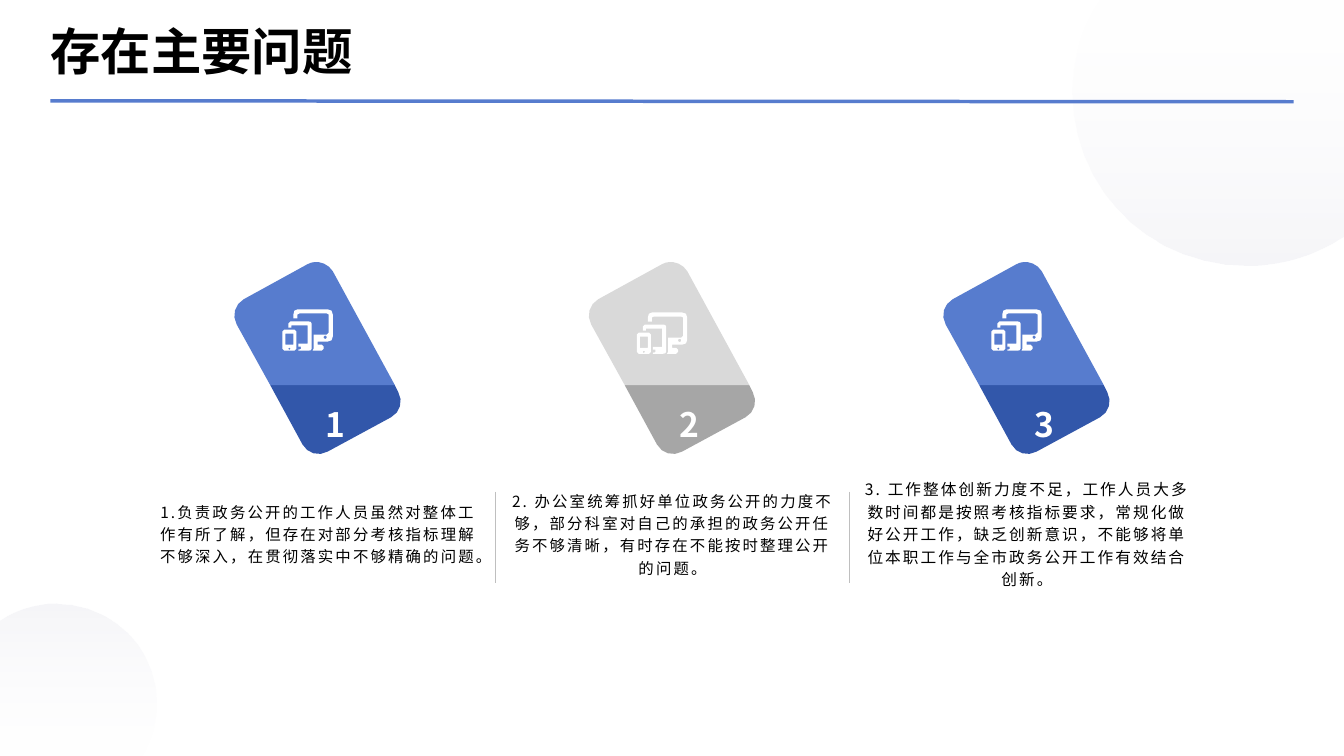
from math import dist, sqrt

from lxml import etree
from pptx import Presentation
from pptx.dml.color import RGBColor
from pptx.enum.shapes import MSO_CONNECTOR
from pptx.enum.text import MSO_ANCHOR, MSO_AUTO_SIZE, PP_ALIGN
from pptx.oxml.ns import qn
from pptx.util import Pt

STRAIGHT = MSO_CONNECTOR.STRAIGHT
MIDDLE = MSO_ANCHOR.MIDDLE
NO_FIT = MSO_AUTO_SIZE.NONE
LEFT, CENTER = PP_ALIGN.LEFT, PP_ALIGN.CENTER

FONT = "Noto Sans CJK SC"
BLUE, DARK_BLUE = "577CCE", "3257AA"
LIGHT_GRAY, GRAY = "D9D9D9", "A6A6A6"
CARD_X, CARD_PITCH = 167.1, 253.2

PROBLEMS = [
    ("1.负责政务公开的工作人员虽然对整体工作有所了解，但存在对部分考核指标理解不够深入，"
     "在贯彻落实中不够精确的问题。", 11, BLUE, DARK_BLUE, 221),
    ("2. 办公室统筹抓好单位政务公开的力度不够，部分科室对自己的承担的政务公开任务不够清晰，"
     "有时存在不能按时整理公开的问题。", 11, LIGHT_GRAY, GRAY, 223.2),
    ("3. 工作整体创新力度不足，工作人员大多数时间都是按照考核指标要求，常规化做好公开工作，"
     "缺乏创新意识，不能够将单位本职工作与全市政务公开工作有效结合创新。", 11.2, BLUE, DARK_BLUE, 221),
]

CARD_TOP = [
    (60.3, 187.2), (64.3, 187.7, 68.3, 190, 70.6, 193.7), (115, 275.2), (26, 275.2),
    (2, 231.8), (-1.6, 225.3, 0.7, 217.4, 7, 213.8), (52.7, 188.7),
    (55.4, 187.2, 57.6, 187.2, 60.3, 187.2),
]
CARD_BASE = [
    (26, 275.2), (115, 275.2), (117.4, 280.1),
    (121, 286.6, 118.8, 294.5, 112.3, 298.1), (67, 322.6),
    (60.5, 326.2, 52.6, 324, 49, 317.5),
]
TOP_CIRCLE = [
    (786.2, 0), (960, 0), (960, 168.5), (950.4, 174.2),
    (932.4, 183.6, 912.2, 189.4, 890.6, 189.4),
    (821.5, 189.4, 766.1, 134.6, 766.1, 66.2), (766.1, 45.4, 771.1, 25.2, 781.2, 7.9),
]
BOTTOM_CIRCLE = [
    (100.1, 540), (0, 540), (0, 443.5), (5.8, 439.9),
    (15.8, 434.9, 27.4, 431.3, 39.6, 431.3),
    (79.2, 431.3, 111.6, 463, 111.6, 501.8), (111.6, 514.1, 108, 525.6, 103, 535.7),
]
TABLET = [
    (4.3, 13), (4.3, 10.1), (4.3, 8.6, 5.8, 8.6), (18.7, 8.6), (20.9, 8.6, 20.9, 10.1),
    (20.9, 28.1), (20.9, 29.5, 18.7, 29.5), (11.5, 29.5), (11.5, 28.7), (13.2, 28.4),
    (13.2, 26.6), (11.5, 26.6), (11.5, 24.5), (18, 24.5), (18, 11.5), (6.5, 11.5), (6.5, 13),
]
MONITOR = [
    (7.9, 6.5), (7.9, 3.6), (7.9, 0, 10.8, 0), (32.4, 0), (36, 0, 36, 3.6), (36, 19.4),
    (36, 23, 32.4, 23), (25.2, 23), (25.2, 25.2), (28.1, 25.2),
    (29.5, 25.2, 29.5, 26.6), (29.5, 28.1), (29.5, 29.5, 28.1, 29.5), (21.6, 29.5),
    (22.3, 28.1), (22.3, 18), (31.7, 18), (33.1, 18, 33.1, 16.6),
    (33.1, 3.6), (33.1, 2.9, 31.7, 2.9), (12.2, 2.9), (10.8, 2.9, 10.8, 3.6), (10.8, 6.5),
]


def rgb(color):
    """Turn a hex string into a colour."""
    return RGBColor.from_string(color)


def apply(target, **values):
    """Set every given attribute on the target."""
    for name, value in values.items():
        setattr(target, name, value)


def rounded(x, y, w, h, radius):
    """Outline a rectangle with rounded corners."""
    r, b = x + w, y + h
    return [(x + radius, y), (r - radius, y), (r, y, r, y + radius), (r, b - radius),
            (r, b, r - radius, b), (x + radius, b), (x, b, x, b - radius),
            (x, y + radius), (x, y, x + radius, y)]


def bezier(points, t):
    """Find the point at t on a Bézier curve of any degree."""
    while len(points) > 1:
        points = [(a + (c - a) * t, b + (d - b) * t)
                  for (a, b), (c, d) in zip(points, points[1:])]
    return points[0]


def flatten(outline, dx, dy):
    """Turn lines and curve control points into shifted vertices."""
    vertices = [outline[0]]
    for step in outline[1:]:
        points = [vertices[-1], *zip(step[::2], step[1::2])]
        curved = len(points) > 2
        count = max(1, round(sqrt(dist(points[0], points[-1])))) if curved else 1
        vertices += [bezier(points, i / count) for i in range(1, count + 1)]
    return [(Pt(x + dx), Pt(y + dy)) for x, y in vertices]


def add_outline(s, outlines, color=None, dx=0, dy=0):
    """Draw outlines as one borderless shape."""
    first, *others = [flatten(outline, dx, dy) for outline in outlines]
    builder = s.shapes.build_freeform(*first[0], scale=1.0)
    builder.add_line_segments(first[1:], close=True)
    for vertices in others:
        builder.move_to(*vertices[0])
        builder.add_line_segments(vertices[1:], close=True)
    shape = builder.convert_to_shape()
    shape.shadow.inherit = False
    shape.line.fill.background()
    if color:
        shape.fill.solid()
        shape.fill.fore_color.rgb = rgb(color)
    return shape


def add_circle(s, outline, angle):
    """Draw a pale see-through background circle."""
    shape = add_outline(s, [outline])
    shape.fill.gradient()
    shape.fill.gradient_angle = angle
    for position, (stop, color) in enumerate(zip(shape.fill.gradient_stops, ("FFFFFF", "D8D8E4"))):
        stop.color.rgb = rgb(color)
        stop.position = position
    for tint, opacity in zip(list(shape._element.spPr.iter(qn("a:srgbClr"))), (10, 24)):
        etree.SubElement(tint, qn("a:alpha"), val=str(opacity * 1000))


def add_line(s, x1, y1, x2, y2, color, width):
    """Draw a straight line without a shadow."""
    line = s.shapes.add_connector(STRAIGHT, Pt(x1), Pt(y1), Pt(x2), Pt(y2))
    line.line.color.rgb = rgb(color)
    line.line.width = Pt(width)
    etree.SubElement(line._element.spPr, qn("a:effectLst"))


def write(tf, text, size, color="000000", bold=False, align=CENTER, spacing=1.2, tracking=0):
    """Write one formatted paragraph, centred vertically."""
    apply(tf, word_wrap=True, auto_size=NO_FIT, vertical_anchor=MIDDLE)
    p = tf.paragraphs[0]
    apply(p, alignment=align, line_spacing=spacing)
    r = p.add_run()
    r.text = text
    apply(r.font, size=Pt(size), bold=bold, name=FONT)
    r.font.color.rgb = rgb(color)
    props = r._r.get_or_add_rPr()
    props.set("spc", str(int(tracking * 100)))
    etree.SubElement(props, qn("a:ea"), typeface=FONT)


def add_title(s, text):
    """Place and write the slide title."""
    title = s.shapes.title
    apply(title, left=Pt(36), top=Pt(12.2), width=Pt(888), height=Pt(48.2))
    tf = title.text_frame
    apply(tf, margin_left=0, margin_right=0, margin_top=0, margin_bottom=0)
    write(tf, text, 36, bold=True, align=LEFT, spacing=1.0)


def add_icon(s, x, y):
    """Draw the white icon of a phone, a tablet and a monitor."""
    phone = rounded(0, 14.4, 10.1, 15.1, 1.4)
    phone_screen = [(2.2, 17.3), (2.2, 25.2), (7.9, 25.2), (7.9, 17.3)]
    phone_button = rounded(4.3, 27.4, 1.4, 1.4, 0.5)
    monitor_button = rounded(29.5, 18.8, 2.2, 2.2, 0.7)
    outlines = [phone, phone_screen, phone_button, TABLET, MONITOR, monitor_button]
    add_outline(s, outlines, "FFFFFF", x, y)


def add_problem(s, index, text, size, top_color, base_color, icon_y):
    """Draw one numbered card with its description."""
    shift = index * CARD_PITCH
    x = CARD_X + shift
    base = add_outline(s, [CARD_BASE], base_color, x)
    write(base.text_frame, str(index + 1), 24, "FFFFFF", bold=True)
    add_outline(s, [CARD_TOP], top_color, x)
    add_icon(s, x + 34.6, icon_y)
    tf = s.shapes.add_textbox(Pt(103 + shift), Pt(339.8), Pt(248.4), Pt(85)).text_frame
    apply(tf, margin_left=Pt(7.2), margin_right=Pt(7.2), margin_top=0, margin_bottom=Pt(3.6))
    write(tf, text, size, tracking=1.5)
    if index:
        divider = 100.3 + shift
        add_line(s, divider, 351.4, divider, 416.2, "BFBFBF", 0.25)


def main():
    """Build and save the slide."""
    prs = Presentation()
    apply(prs, slide_width=Pt(960), slide_height=Pt(540))
    s = prs.slides.add_slide(prs.slide_layouts[5])
    add_circle(s, TOP_CIRCLE, 270)
    add_circle(s, BOTTOM_CIRCLE, 90)
    add_line(s, 36, 72, 924, 72.7, BLUE, 2.5)
    add_title(s, "存在主要问题")
    for index, problem in enumerate(PROBLEMS):
        add_problem(s, index, *problem)
    prs.save("out.pptx")


if __name__ == "__main__":
    main()
